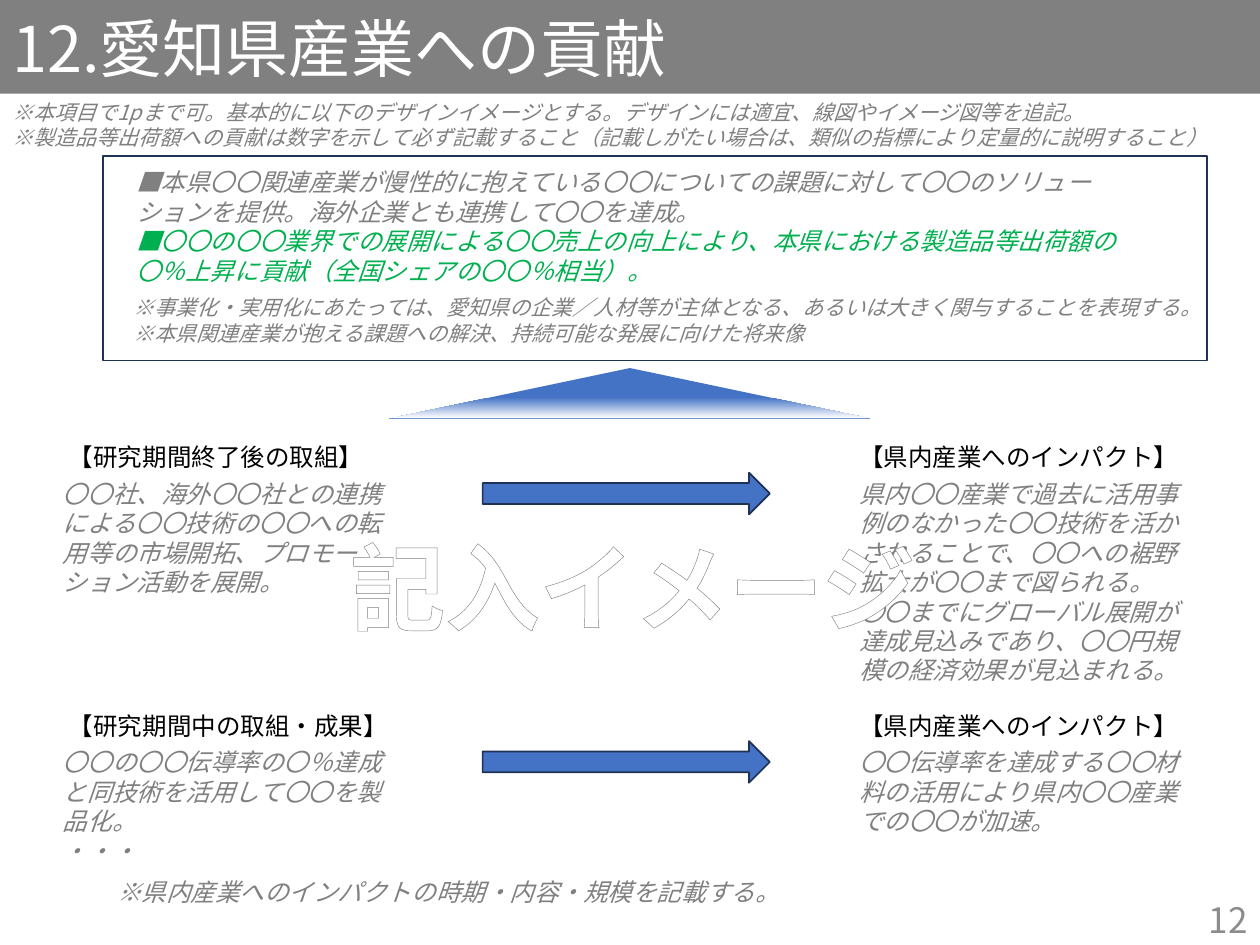
from copy import deepcopy

from lxml import etree
from pptx import Presentation
from pptx.dml.color import RGBColor
from pptx.enum.shapes import MSO_SHAPE
from pptx.enum.text import MSO_ANCHOR, PP_ALIGN
from pptx.oxml.ns import qn
from pptx.util import Cm, Pt

RECTANGLE = MSO_SHAPE.RECTANGLE
TRIANGLE = MSO_SHAPE.ISOSCELES_TRIANGLE
RIGHT_ARROW = MSO_SHAPE.RIGHT_ARROW
TOP, MIDDLE = MSO_ANCHOR.TOP, MSO_ANCHOR.MIDDLE
LEFT, CENTER, RIGHT = PP_ALIGN.LEFT, PP_ALIGN.CENTER, PP_ALIGN.RIGHT

WHITE = RGBColor(0xFF, 0xFF, 0xFF)
BLACK = RGBColor(0, 0, 0)
GRAY = RGBColor(0x80, 0x80, 0x80)
PAGE_GRAY = RGBColor(0x8C, 0x8C, 0x8C)
GREEN = RGBColor(0, 0xB0, 0x50)
BLUE = RGBColor(0x44, 0x72, 0xC4)
NAVY = RGBColor(0x1E, 0x32, 0x56)

JAPANESE_FONT = "Noto Sans CJK JP"

# Font formats; "color" is applied apart from the plain attributes
TITLE = {"size": Pt(36), "color": WHITE}
PAGE = {"size": Pt(20), "color": PAGE_GRAY}
HEADING = {"size": Pt(14), "color": BLACK}
BODY = {"size": Pt(14), "color": GRAY, "italic": True}
TARGET = {**BODY, "color": GREEN}
NOTE = {**BODY, "size": Pt(12)}
STAMP = {"size": Pt(54), "color": WHITE, "bold": True}

# Each row: top of the body texts, their height, then heading and paragraphs per column
COLUMN_WIDTH = 7
ROWS = [
    (9.53, 3.2,
     ("【研究期間終了後の取組】",
      ["〇〇社、海外〇〇社との連携による〇〇技術の〇〇への転用等の市場開拓、プロモーション活動を展開。"]),
     ("【県内産業へのインパクト】",
      ["県内〇〇産業で過去に活用事例のなかった〇〇技術を活かされることで、〇〇への裾野拡大が〇〇まで図られる。",
       "〇〇までにグローバル展開が達成見込みであり、〇〇円規模の経済効果が見込まれる。"])),
    (14.94, 2.82,
     ("【研究期間中の取組・成果】",
      ["〇〇の〇〇伝導率の〇％達成と同技術を活用して〇〇を製品化。", "・・・"]),
     ("【県内産業へのインパクト】",
      ["〇〇伝導率を達成する〇〇材料の活用により県内〇〇産業での〇〇が加速。"])),
]


def add_run(paragraph, text, font_format, name=JAPANESE_FONT):
    run = paragraph.add_run()
    run.text = text
    run.font.name = name
    for attribute, value in font_format.items():
        if attribute == "color":
            run.font.color.rgb = value
        else:
            setattr(run.font, attribute, value)
    if name == JAPANESE_FONT:
        east_asian = etree.SubElement(run.font._element, qn("a:ea"))
        east_asian.set("typeface", name)
    return run


def fill_text(frame, paragraphs, alignment=LEFT, anchor=TOP):
    """Write (text, font format) pairs, one to a paragraph."""
    frame.word_wrap = True
    frame.vertical_anchor = anchor
    for index, (text, font_format) in enumerate(paragraphs):
        paragraph = frame.add_paragraph() if index else frame.paragraphs[0]
        paragraph.alignment = alignment
        add_run(paragraph, text, font_format)


def add_text(slide, box, paragraphs, **layout):
    text_box = slide.shapes.add_textbox(*map(Cm, box))
    fill_text(text_box.text_frame, paragraphs, **layout)


def add_shape(slide, kind, box, fill=None, line=None):
    shape = slide.shapes.add_shape(kind, *map(Cm, box))
    shape.shadow.inherit = False
    if fill is None:
        shape.fill.background()
    else:
        shape.fill.solid()
        shape.fill.fore_color.rgb = fill
    if line is None:
        shape.line.fill.background()
    else:
        shape.line.color.rgb = line
        shape.line.width = Pt(1)
    return shape


def add_fading_triangle(slide, box):
    triangle = add_shape(slide, TRIANGLE, box)
    triangle.fill.gradient()
    triangle.fill.gradient_angle = 270
    stops = triangle.fill.gradient_stops
    for stop, position, color in zip(stops, (0.58, 0.99), (BLUE, WHITE)):
        stop.position = position
        stop.color.rgb = color
    # Blue again at the very end, for a thin base line
    stop_list = triangle._element.spPr.find(".//" + qn("a:gsLst"))
    end_stop = deepcopy(stop_list[0])
    end_stop.set("pos", "100000")
    stop_list.append(end_stop)


def add_stamp(slide, box, text):
    frame = slide.shapes.add_textbox(*map(Cm, box)).text_frame
    frame.word_wrap = False
    paragraph = frame.paragraphs[0]
    paragraph.alignment = CENTER
    run = add_run(paragraph, text, STAMP, "Calibri")
    outline = etree.Element(qn("a:ln"), w=str(Pt(0.8)))
    solid = etree.SubElement(outline, qn("a:solidFill"))
    etree.SubElement(solid, qn("a:srgbClr"), val=str(GRAY))
    run.font._element.insert(0, outline)


def add_row(slide, top, height, *columns):
    for (heading, texts), heading_left, body_left in zip(
            columns, (1.14, 17.07), (1.02, 17.07)):
        add_text(slide, (heading_left, top - 0.74, COLUMN_WIDTH, 0.84),
                 [(heading, HEADING)])
        add_text(slide, (body_left, top, COLUMN_WIDTH, height),
                 [(text, BODY) for text in texts])
    add_shape(slide, RIGHT_ARROW, (9.73, top, 5.79, 0.84), BLUE, NAVY)


def main():
    presentation = Presentation()
    presentation.slide_width, presentation.slide_height = Cm(25.4), Cm(19.05)
    slide = presentation.slides.add_slide(presentation.slide_layouts[6])

    # Title bar, instructions and page number
    add_text(slide, (0, 1.88, 25.63, 1.4), [
        ("※本項目で1pまで可。基本的に以下のデザインイメージとする。デザインには適宜、線図やイメージ図等を追記。", NOTE),
        ("※製造品等出荷額への貢献は数字を示して必ず記載すること（記載しがたい場合は、類似の指標により定量的に説明すること）　", NOTE)])
    title_bar = add_shape(slide, RECTANGLE, (0, 0, 25.4, 1.89), GRAY)
    fill_text(title_bar.text_frame, [("12.愛知県産業への貢献", TITLE)], anchor=MIDDLE)
    add_run(title_bar.text_frame.paragraphs[0], "　",
            {**TITLE, "size": Pt(14)}, "TeX Gyre Schola")
    add_text(slide, (19.69, 18.03, 5.71, 1.02), [("12", PAGE)],
             alignment=RIGHT, anchor=MIDDLE)

    # Framed summary
    add_shape(slide, RECTANGLE, (2.08, 3.14, 22.25, 4.13), line=NAVY)
    add_text(slide, (2.44, 5.82, 21.89, 1.63), [
        ("※事業化・実用化にあたっては、愛知県の企業／人材等が主体となる、あるいは大きく関与することを表現する。", NOTE),
        ("※本県関連産業が抱える課題への解決、持続可能な発展に向けた将来像", NOTE)])
    add_text(slide, (2.5, 3.25, 20.52, 2.57), [
        ("■本県〇〇関連産業が慢性的に抱えている〇〇についての課題に対して〇〇のソリューションを提供。海外企業とも連携して〇〇を達成。", BODY),
        ("■〇〇の〇〇業界での展開による〇〇売上の向上により、本県における製造品等出荷額の〇％上昇に貢献（全国シェアの〇〇％相当）。", TARGET)])
    add_fading_triangle(slide, (7.85, 7.42, 9.7, 1.02))

    # Activities leading to impacts
    for row in ROWS:
        add_row(slide, *row)
    add_text(slide, (2.11, 17.55, 19.56, 1.24),
             [("※県内産業へのインパクトの時期・内容・規模を記載する。", BODY)])

    add_stamp(slide, (6.73, 10.54, 12.07, 2.57), "記入イメージ")
    presentation.save("out.pptx")


if __name__ == "__main__":
    main()
